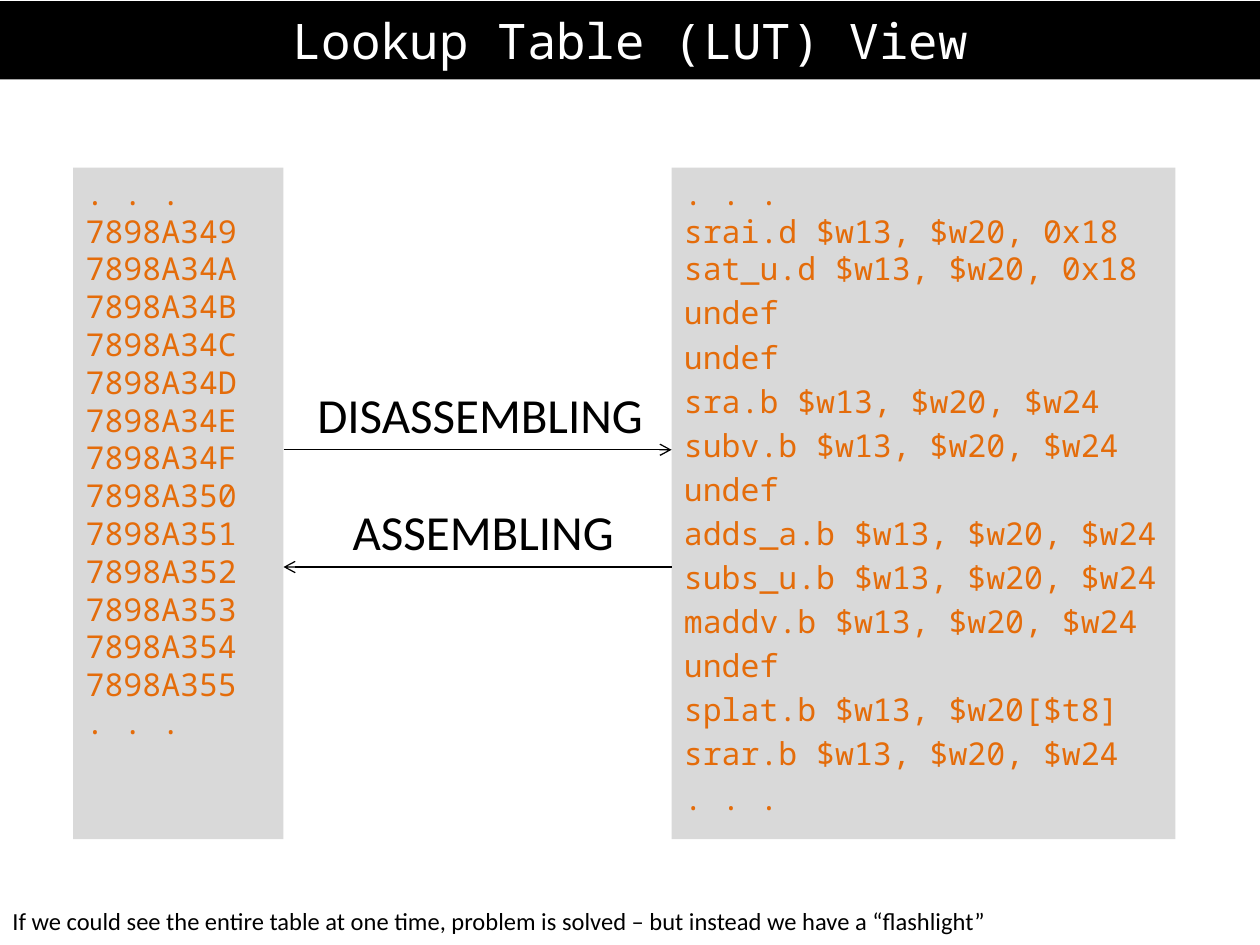
from copy import deepcopy

from pptx import Presentation
from pptx.dml.color import RGBColor
from pptx.enum.shapes import MSO_CONNECTOR, MSO_SHAPE
from pptx.enum.text import MSO_ANCHOR, MSO_AUTO_SIZE, PP_ALIGN
from pptx.oxml.ns import qn
from pptx.oxml.xmlchemy import OxmlElement
from pptx.util import Inches, Pt

STRAIGHT = MSO_CONNECTOR.STRAIGHT
RECTANGLE = MSO_SHAPE.RECTANGLE
TOP, MIDDLE = MSO_ANCHOR.TOP, MSO_ANCHOR.MIDDLE
NO_FIT, GROW = MSO_AUTO_SIZE.NONE, MSO_AUTO_SIZE.SHAPE_TO_FIT_TEXT
LEFT, CENTER = PP_ALIGN.LEFT, PP_ALIGN.CENTER

MONO, SANS = "Noto Sans Mono", "Calibri"
BLACK, WHITE, GRAY, ORANGE = "000000", "FFFFFF", "D9D9D9", "E46C0A"
TABLE_TOP, TABLE_HEIGHT = 1.33, 5.33
CODES_LEFT, CODES_WIDTH = 0.58, 1.67
INSTRUCTIONS_LEFT, INSTRUCTIONS_WIDTH = 5.33, 4
FIRST_CODE, CODE_COUNT = 0x7898A349, 13
ELLIPSIS = ". . ."
INSTRUCTIONS = [
    "\v".join([ELLIPSIS, "srai.d $w13, $w20, 0x18", "sat_u.d $w13, $w20, 0x18"]),
    "undef",
    "undef",
    "sra.b $w13, $w20, $w24",
    "subv.b $w13, $w20, $w24",
    "undef",
    "adds_a.b $w13, $w20, $w24",
    "subs_u.b $w13, $w20, $w24",
    "maddv.b $w13, $w20, $w24",
    "undef",
    "splat.b $w13, $w20[$t8]",
    "srar.b $w13, $w20, $w24",
    ELLIPSIS,
]


def color(hex_value):
    """Return the colour for a hex string."""
    return RGBColor.from_string(hex_value)


def place(shape, left, top, width, height):
    """Move and size a shape in inches."""
    shape.left, shape.top = Inches(left), Inches(top)
    shape.width, shape.height = Inches(width), Inches(height)


def fill_shape(shape, hex_value):
    """Give a shape a solid fill and no outline."""
    shape.fill.solid()
    shape.fill.fore_color.rgb = color(hex_value)
    shape.line.fill.background()


def write_text(shape, paragraphs, size, font=SANS, hex_value=BLACK, align=LEFT,
               anchor=TOP, fit=NO_FIT, before=0):
    """Write formatted paragraphs, with line breaks at vertical tabs."""
    frame = shape.text_frame
    frame.word_wrap = True
    frame.auto_size = fit
    frame.vertical_anchor = anchor
    frame.text = "\n".join(paragraphs)
    for paragraph in frame.paragraphs:
        paragraph.alignment = align
        paragraph.space_before = Pt(before)
        for run in paragraph.runs:
            run.font.size = Pt(size)
            run.font.name = font
            run.font.color.rgb = color(hex_value)
        properties = paragraph.runs[0]._r.rPr
        for line_break in paragraph._p.findall(qn("a:br")):
            line_break.insert(0, deepcopy(properties))


def remove_bullets(shape):
    """Remove bullets and hanging indents from a list."""
    for paragraph in shape.text_frame.paragraphs:
        properties = paragraph._p.get_or_add_pPr()
        properties.set("marL", "0")
        properties.set("indent", "0")
        properties.append(OxmlElement("a:buNone"))


def fill_column(shape, paragraphs):
    """Format a shape as one column of the lookup table."""
    fill_shape(shape, GRAY)
    write_text(shape, paragraphs, 18, font=MONO, hex_value=ORANGE, before=3.6)


def add_label(slide, text, left, top, width, height, **text_format):
    """Add a text box that grows with its text."""
    box = slide.shapes.add_textbox(0, 0, 0, 0)
    write_text(box, [text], fit=GROW, **text_format)
    place(box, left, top, width, height)


def add_arrow(slide, start, end, y):
    """Add a horizontal black arrow."""
    arrow = slide.shapes.add_connector(
        STRAIGHT, Inches(start), Inches(y), Inches(end), Inches(y))
    arrow.line.color.rgb = color(BLACK)
    arrow.line.width = Pt(0.75)
    head = OxmlElement("a:tailEnd")
    head.set("type", "arrow")
    arrow.line._get_or_add_ln().append(head)
    arrow._element.spPr.append(OxmlElement("a:effectLst"))


def main():
    """Build the slide and save it."""
    presentation = Presentation()
    presentation.slide_width, presentation.slide_height = Inches(10), Inches(7.5)
    slide = presentation.slides.add_slide(presentation.slide_layouts[1])

    title, codes = slide.placeholders
    place(title, 0, 0.01, 10, 0.62)
    fill_shape(title, BLACK)
    write_text(title, ["Lookup Table (LUT) View"], 28, font=MONO,
               hex_value=WHITE, align=CENTER, anchor=MIDDLE)

    code_lines = [f"{FIRST_CODE + step:X}" for step in range(CODE_COUNT)]
    place(codes, CODES_LEFT, TABLE_TOP, CODES_WIDTH, TABLE_HEIGHT)
    fill_column(codes, ["\v".join([ELLIPSIS, *code_lines, ELLIPSIS])])
    remove_bullets(codes)

    instructions = slide.shapes.add_shape(RECTANGLE, 0, 0, 0, 0)
    instructions.shadow.inherit = False
    place(instructions, INSTRUCTIONS_LEFT, TABLE_TOP, INSTRUCTIONS_WIDTH, TABLE_HEIGHT)
    fill_column(instructions, INSTRUCTIONS)

    codes_right = CODES_LEFT + CODES_WIDTH
    for text, top, start, end, align in [
        ("DISASSEMBLING", 3, codes_right, INSTRUCTIONS_LEFT, LEFT),
        ("ASSEMBLING", 3.93, INSTRUCTIONS_LEFT, codes_right, CENTER),
    ]:
        add_arrow(slide, start, end, top + 0.57)
        add_label(slide, text, 2.42, top, 2.83, 0.57, size=28, align=align)

    add_label(slide, "If we could see the entire table at one time, problem is solved "
              "– but instead we have a “flashlight”", 0, 7.14, 10, 0.34, size=14)
    presentation.save("out.pptx")


if __name__ == "__main__":
    main()
